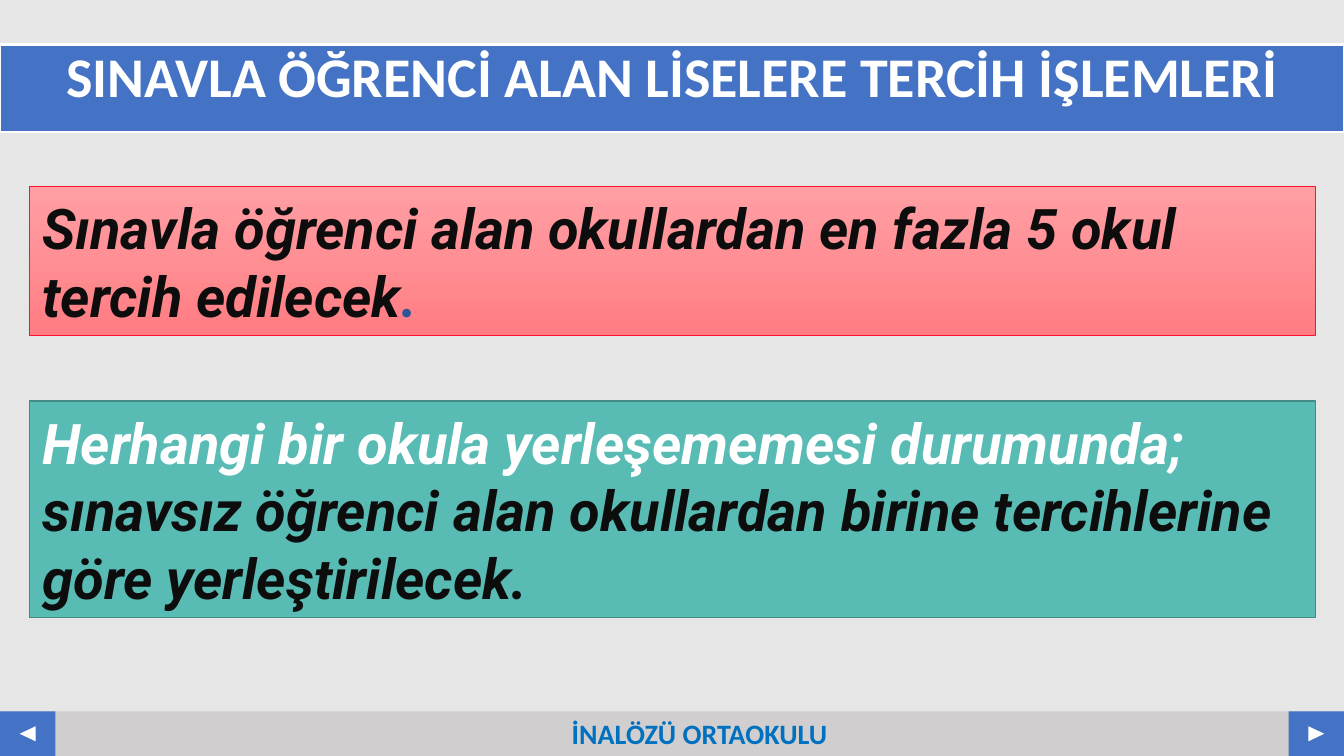
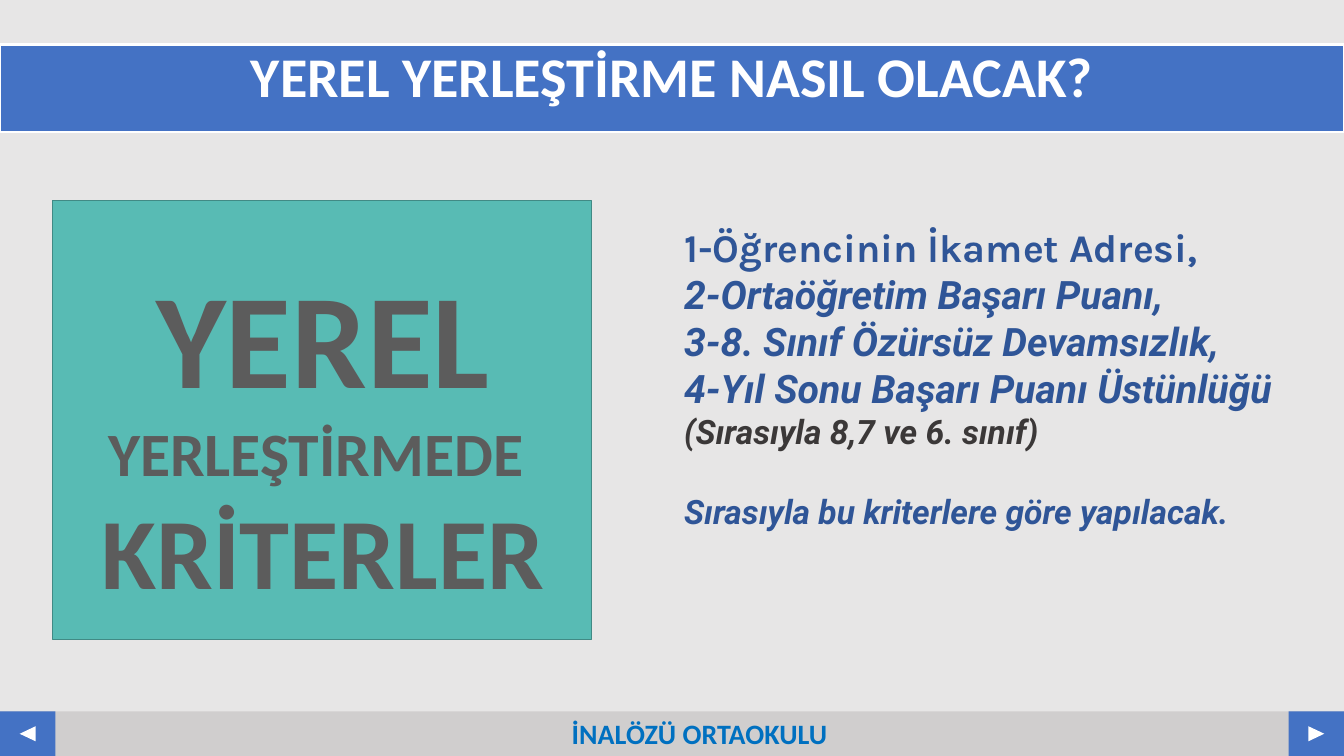
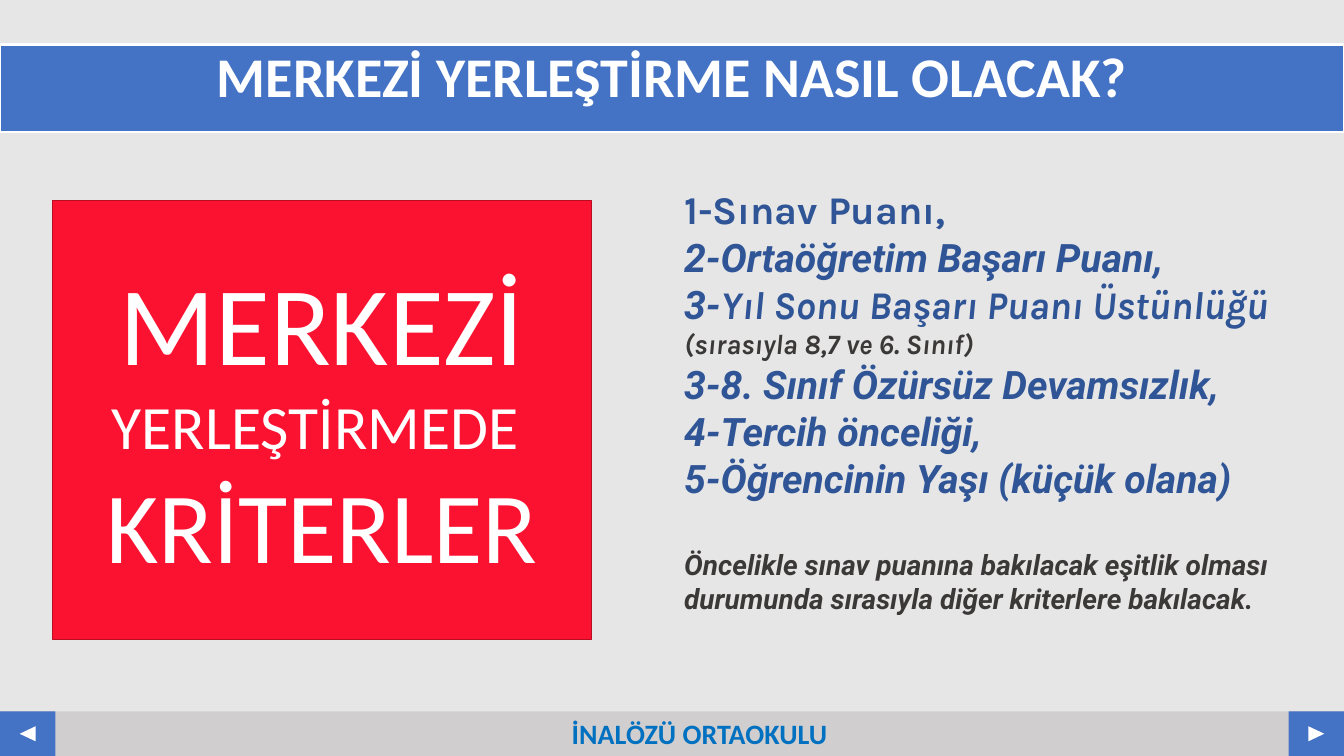
from collections import namedtuple

from pptx import Presentation
from pptx.dml.color import RGBColor
from pptx.enum.shapes import MSO_SHAPE
from pptx.enum.text import MSO_ANCHOR, PP_ALIGN
from pptx.util import Inches, Pt

RECT, TRIANGLE = MSO_SHAPE.RECTANGLE, MSO_SHAPE.ISOSCELES_TRIANGLE
TOP, MIDDLE = MSO_ANCHOR.TOP, MSO_ANCHOR.MIDDLE
LEFT, CENTER = PP_ALIGN.LEFT, PP_ALIGN.CENTER

COLS, ROWS = 32, 18
GREY, BAND, BLUE, WHITE = "E7E6E6", "D0CECE", "4472C4", "FFFFFF"
NAVY, BLACK, DARK, STONE = "2F5597", "0D0D0D", "3B3838", "5C5C5C"
TEAL, TEAL_EDGE, RED, RED_EDGE = "58BBB4", "418A85", "FA1230", "B90D24"
SKY, ROSE = "0070C0", ("FF9FA4", "FF7D83")

Style = namedtuple("Style", "size color font bold italic", defaults=("Roboto", True, True))
TITLE = Style(40, WHITE, "Calibri", True, False)
FOOTER = Style(20, SKY, "Calibri", True, False)
BIG_BLACK, BIG_WHITE, BIG_NAVY = (Style(40, c) for c in (BLACK, WHITE, NAVY))
ITEM = Style(28, NAVY)
ITEM_KARLA = ITEM._replace(font="Karla")
FIRST_ITEM = ITEM_KARLA._replace(italic=False)
NOTE = Style(24, DARK)
SMALL_NOTE = Style(20, DARK)


def rgb(value):
    return RGBColor.from_string(value)


class Deck:
    def __init__(self):
        self.prs = Presentation()
        self.prs.slide_width = Inches(13.33)
        self.prs.slide_height = Inches(7.5)
        self.s = None

    def x(self, cols):
        return round(self.prs.slide_width * cols / COLS)

    def y(self, rows):
        return round(self.prs.slide_height * rows / ROWS)

    def place(self, left, top, width, height):
        return self.x(left), self.y(top), self.x(width), self.y(height)

    def slide(self, title):
        self.s = self.prs.slides.add_slide(self.prs.slide_layouts[6])
        fill = self.s.background.fill
        fill.solid()
        fill.fore_color.rgb = rgb(GREY)
        self.footer()
        sp = self.shape((0, 1.06, COLS, 2.09), BLUE, WHITE, 1.5)
        self.fill_text(sp, [[(title, TITLE)]], align=CENTER, line_spacing=0.9)

    def footer(self):
        top, height, button = 16.94, 1.06, 1.32
        self.shape((0, top, COLS, height), BAND)
        for left, turn in ((0, 270), (COLS - button, 90)):
            self.shape((left, top, button, height), BLUE)
            sp = self.shape((left + 0.48, top + 0.34, 0.36, 0.38), WHITE, kind=TRIANGLE)
            sp.rotation = turn
        self.text((11.83, top, 9.65, height), [[("İNALÖZÜ ORTAOKULU", FOOTER)]], align=CENTER)

    def shape(self, at, fill, line=None, weight=1, kind=RECT):
        sp = self.s.shapes.add_shape(kind, *self.place(*at))
        sp.shadow.inherit = False
        if isinstance(fill, tuple):
            sp.fill.gradient()
            sp.fill.gradient_angle = 270
            for stop, color in zip(sp.fill.gradient_stops, fill):
                stop.color.rgb = rgb(color)
        else:
            sp.fill.solid()
            sp.fill.fore_color.rgb = rgb(fill)
        if line:
            sp.line.color.rgb = rgb(line)
            sp.line.width = Pt(weight)
        else:
            sp.line.fill.background()
        return sp

    def text(self, at, paragraphs, **options):
        sp = self.s.shapes.add_textbox(*self.place(*at))
        self.fill_text(sp, paragraphs, **options)

    def fill_text(self, sp, paragraphs, align=LEFT, anchor=TOP, inset=(0.24, 0.12),
                  bottom=None, gaps=None, line_spacing=None):
        tf = sp.text_frame
        tf.word_wrap = True
        tf.vertical_anchor = anchor
        tf.margin_left = tf.margin_right = self.x(inset[0])
        tf.margin_top = self.y(inset[1])
        tf.margin_bottom = self.y(bottom or inset[1])
        for i, runs in enumerate(paragraphs):
            p = tf.add_paragraph() if i else tf.paragraphs[0]
            p.alignment = align
            if line_spacing:
                p.line_spacing = line_spacing
            if gaps and i in gaps:
                p.space_before = Pt(gaps[i])
            for words, style in runs:
                r = p.add_run()
                r.text = words
                r.font.name = style.font
                r.font.size = Pt(style.size)
                r.font.bold = style.bold
                r.font.italic = style.italic
                r.font.color.rgb = rgb(style.color)

    def callout(self, top, height, fill, line, weight, runs):
        sp = self.shape((0.7, top, 30.62, height), fill, line, weight)
        self.fill_text(sp, [runs], anchor=MIDDLE, inset=(0.31, 0.17))

    def panel(self, word, size, fill, line, color, bold, text_at):
        self.shape((1.25, 4.78, 12.84, 10.44), fill, line)
        style = Style(size, color, "Calibri", bold, False)
        self.text(text_at, [
            [(word, style), (" YERLEŞTİRMEDE ", style._replace(size=44))],
            [("KRİTERLER", style._replace(size=72))],
        ], align=CENTER)

    def criteria(self, top, height, bottom, gaps, paragraphs):
        self.text((15.98, top, 15.12, height), paragraphs, anchor=MIDDLE,
                  inset=(0.31, 0.17), bottom=bottom, gaps=gaps)


def main():
    deck = Deck()

    deck.slide("SINAVLA ÖĞRENCİ ALAN LİSELERE TERCİH İŞLEMLERİ")
    deck.callout(4.44, 3.55, ROSE, RED, 0.5, [
        ("Sınavla öğrenci alan okullardan en fazla 5 okul tercih edilecek", BIG_BLACK),
        (".", BIG_NAVY),
    ])
    deck.callout(9.55, 5.16, TEAL, TEAL_EDGE, 1, [
        ("Herhangi bir okula yerleşememesi durumunda; ", BIG_WHITE),
        ("sınavsız öğrenci alan okullardan birine tercihlerine göre yerleştirilecek.", BIG_BLACK),
    ])

    deck.slide("YEREL YERLEŞTİRME NASIL OLACAK?")
    deck.criteria(4.92, 10.34, 2.4, {4: 28}, [
        [("1-Öğrencinin İkamet Adresi,", FIRST_ITEM)],
        [("2-Ortaöğretim Başarı Puanı,", ITEM)],
        [("3-8. Sınıf Özürsüz Devamsızlık,", ITEM)],
        [("4-Yıl Sonu Başarı Puanı Üstünlüğü ", ITEM), ("(Sırasıyla 8,7 ve 6. sınıf)", NOTE)],
        [("Sırasıyla bu kriterlere göre yapılacak.", NOTE._replace(color=NAVY))],
    ])
    deck.panel("YEREL", 96, TEAL, TEAL_EDGE, STONE, True, (2.11, 5.93, 11.16, 8.81))

    deck.slide("MERKEZİ YERLEŞTİRME NASIL OLACAK?")
    deck.criteria(3.62, 12.94, 1.28, {6: 33}, [
        [("1-Sınav Puanı,", FIRST_ITEM)],
        [("2-Ortaöğretim Başarı Puanı,", ITEM)],
        [("3-", ITEM), ("Yıl Sonu Başarı Puanı Üstünlüğü ", ITEM_KARLA),
         ("(sırasıyla 8,7 ve 6. Sınıf)", SMALL_NOTE._replace(font="Karla"))],
        [("3-8. Sınıf Özürsüz Devamsızlık,", ITEM)],
        [("4-Tercih önceliği,", ITEM)],
        [("5-Öğrencinin Yaşı (küçük olana)", ITEM)],
        [("Öncelikle sınav puanına bakılacak eşitlik olması durumunda "
          "sırasıyla diğer kriterlere bakılacak.", SMALL_NOTE)],
    ])
    deck.panel("MERKEZİ", 80, RED, RED_EDGE, WHITE, False, (1.25, 5.93, 12.84, 8.16))

    deck.prs.save("out.pptx")


if __name__ == "__main__":
    main()
